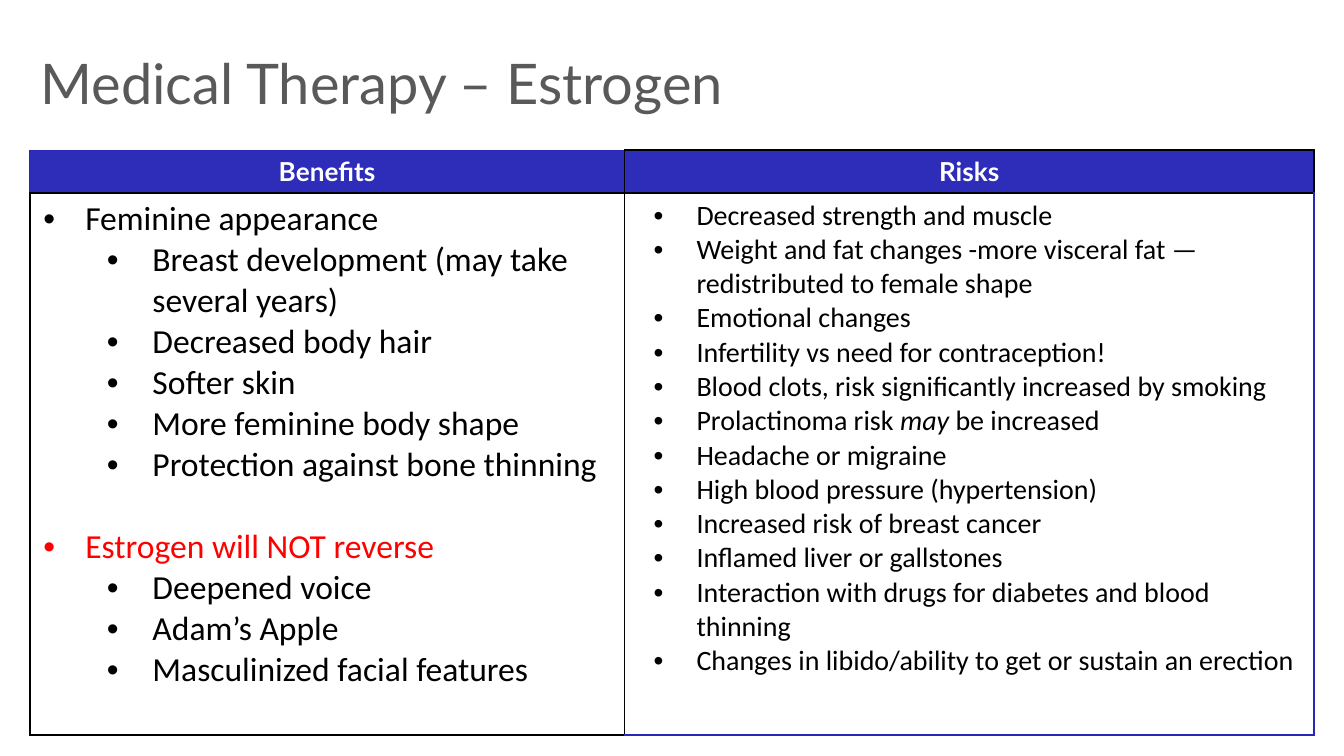
from lxml.etree import SubElement
from pptx import Presentation
from pptx.dml.color import RGBColor
from pptx.enum.text import MSO_ANCHOR as Anchor, MSO_AUTO_SIZE as AutoSize, PP_ALIGN as Align
from pptx.oxml.ns import qn
from pptx.util import Pt

BLACK, RED, WHITE, GREY = "000000", "FF0000", "FFFFFF", "595959"
HEADER_BLUE, EDGE_BLUE = "2D2DB9", "2828B8"

TITLE_FRAME = dict(margin_left=Pt(7.2), margin_right=Pt(7.2), margin_top=Pt(7.2),
                   margin_bottom=Pt(7.2), vertical_anchor=Anchor.MIDDLE,
                   word_wrap=True, auto_size=AutoSize.NONE)
CELL_FRAME = dict(margin_left=Pt(7.2), margin_right=Pt(7.2),
                  margin_top=Pt(3), margin_bottom=Pt(3), vertical_anchor=Anchor.TOP)
TITLE_FONT = dict(name="Lato", size=Pt(30), bold=False)
HEADER_FONT = dict(name="Lato", size=Pt(14), bold=True)
BENEFIT_FONT = dict(name="Calibri", size=Pt(18), bold=False)
RISK_FONT = dict(name="Calibri", size=Pt(15), bold=False)

BENEFITS = [
    ("Feminine appearance", [
        "Breast development (may take several years)",
        "Decreased body hair",
        "Softer skin",
        "More feminine body shape",
        "Protection against bone thinning",
    ], BLACK, 0),
    ("Estrogen will NOT reverse", [
        "Deepened voice",
        "Adam’s Apple",
        "Masculinized facial features",
    ], RED, 22),
]
RISKS = [
    ["Decreased strength and muscle"],
    ["Weight and fat changes -more visceral fat — redistributed to female shape"],
    ["Emotional changes"],
    ["Infertility vs need for contraception!"],
    ["Blood clots, risk significantly increased by smoking"],
    ["Prolactinoma risk ", "may", " be increased"],
    ["Headache or migraine"],
    ["High blood pressure (hypertension)"],
    ["Increased risk of breast cancer"],
    ["Inflamed liver or gallstones"],
    ["Interaction with drugs for diabetes and blood thinning"],
    ["Changes in libido/ability to get or sustain an erection"],
]


def colour(hex_string):
    return RGBColor.from_string(hex_string)


def apply(target, values):
    for name, value in values.items():
        setattr(target, name, value)


def add_words(paragraph, words, font, ink):
    run = paragraph.add_run()
    run.text = words
    apply(run.font, font)
    run.font.color.rgb = colour(ink)
    return run


def add_bullet(frame, parts, font, ink, indent, hanging, level=0, before=0):
    first = frame.paragraphs[0]
    paragraph = frame.add_paragraph() if first.runs else first
    apply(paragraph, dict(level=level, space_before=Pt(before), alignment=Align.LEFT))
    for position, words in enumerate(parts):
        add_words(paragraph, words, font, ink).font.italic = position % 2 == 1
    props = paragraph._p.get_or_add_pPr()
    props.set("marL", str(Pt(indent)))
    props.set("indent", str(-Pt(hanging)))
    SubElement(SubElement(props, qn("a:buClr")), qn("a:srgbClr"), val=ink)
    SubElement(props, qn("a:buFont"), typeface="Arial")
    SubElement(props, qn("a:buChar"), char="•")


def format_cell(cell, blue_sides, fill=None):
    apply(cell, CELL_FRAME)
    props = cell._tc.get_or_add_tcPr()
    for side in "LRTB":
        ink, width = (EDGE_BLUE, 0.75) if side in blue_sides else (BLACK, 1)
        line = SubElement(props, qn(f"a:ln{side}"), w=str(Pt(width)))
        SubElement(SubElement(line, qn("a:solidFill")), qn("a:srgbClr"), val=ink)
    if fill:
        cell.fill.solid()
        cell.fill.fore_color.rgb = colour(fill)
    else:
        cell.fill.background()


def fill_header(cell, label, blue_sides):
    format_cell(cell, blue_sides, HEADER_BLUE)
    heading = cell.text_frame.paragraphs[0]
    heading.alignment = Align.CENTER
    add_words(heading, label, HEADER_FONT, WHITE)


def fill_benefits(cell):
    format_cell(cell, "")
    for topic, details, ink, before in BENEFITS:
        add_bullet(cell.text_frame, [topic], BENEFIT_FONT, ink, 22.5, 24.5, before=before)
        for detail in details:
            add_bullet(cell.text_frame, [detail], BENEFIT_FONT, BLACK, 58.5, 24.5, level=1)


def fill_risks(cell):
    format_cell(cell, "RB")
    for parts in RISKS:
        add_bullet(cell.text_frame, parts, RISK_FONT, BLACK, 31.5, 23)


def place_title(slide, left, top, width, height):
    title = slide.shapes.title
    apply(title, dict(left=Pt(left), top=Pt(top), width=Pt(width), height=Pt(height)))
    apply(title.text_frame, TITLE_FRAME)
    heading = title.text_frame.paragraphs[0]
    heading.alignment = Align.LEFT
    add_words(heading, "Medical Therapy – Estrogen", TITLE_FONT, GREY)


def place_comparison(slide, left, top, width, height):
    header_height, benefits_width = 22, 318.5
    table = slide.shapes.add_table(2, 2, Pt(left), Pt(top), Pt(width), Pt(height)).table
    apply(table, dict(first_row=False, horz_banding=False))
    for column, size in zip(table.columns, (benefits_width, width - benefits_width)):
        column.width = Pt(size)
    for row, size in zip(table.rows, (header_height, height - header_height)):
        row.height = Pt(size)
    fill_header(table.cell(0, 0), "Benefits", "LT")
    fill_header(table.cell(0, 1), "Risks", "")
    fill_benefits(table.cell(1, 0))
    fill_risks(table.cell(1, 1))


def main():
    deck = Presentation()
    apply(deck, dict(slide_width=Pt(720), slide_height=Pt(405)))
    slide = deck.slides.add_slide(deck.slide_layouts[5])
    place_title(slide, 14.5, 12.5, 648, 63.5)
    place_comparison(slide, 16, 80.5, 688, 312.5)
    deck.save("out.pptx")


if __name__ == "__main__":
    main()
